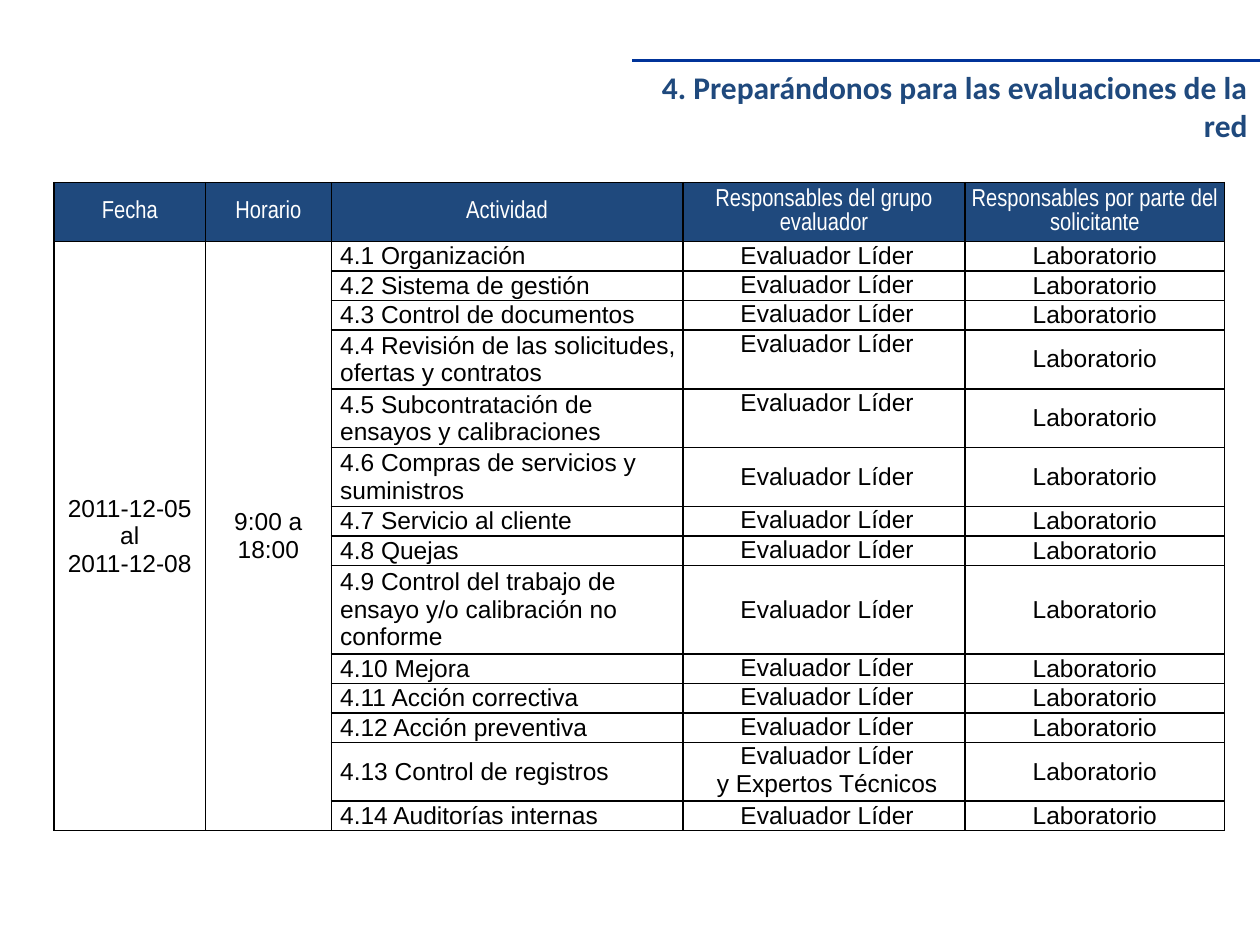
import pptx
import pptx.util
import pptx.dml.color
import pptx.enum.shapes
import pptx.enum.text
import pptx.oxml.ns
from lxml import etree

Inches = pptx.util.Inches
Pt = pptx.util.Pt
RGB = pptx.dml.color.RGBColor
Align = pptx.enum.text.PP_ALIGN
Anchor = pptx.enum.text.MSO_ANCHOR
qn = pptx.oxml.ns.qn

NAVY = RGB(0x1F, 0x49, 0x7D)
BLUE = RGB(0x00, 0x33, 0x99)
BLACK = RGB(0, 0, 0)
WHITE = RGB(0xFF, 0xFF, 0xFF)

HEADS = ["Fecha", "Horario", "Actividad", "Responsables del grupo evaluador",
         "Responsables por parte del solicitante"]
DATES = ["2011-12-05 al", "2011-12-08"]
HOURS = ["9:00 a 18:00"]
LEAD = "Evaluador Líder"
LAB = "Laboratorio"
# Activity, lines of text in the row, anchor of the evaluator cell
TASKS = [
    ("4.1 Organización", 1, Anchor.MIDDLE),
    ("4.2 Sistema de gestión", 1, Anchor.TOP),
    ("4.3 Control de documentos", 1, Anchor.TOP),
    ("4.4 Revisión de las solicitudes, ofertas y contratos", 2, Anchor.TOP),
    ("4.5 Subcontratación de ensayos y calibraciones", 2, Anchor.TOP),
    ("4.6 Compras de servicios y suministros", 2, Anchor.MIDDLE),
    ("4.7 Servicio al cliente", 1, Anchor.TOP),
    ("4.8 Quejas", 1, Anchor.TOP),
    ("4.9 Control del trabajo de ensayo y/o calibración no conforme", 3, Anchor.MIDDLE),
    ("4.10 Mejora", 1, Anchor.TOP),
    ("4.11 Acción correctiva", 1, Anchor.TOP),
    ("4.12 Acción preventiva", 1, Anchor.TOP),
    ("4.13 Control de registros", 2, Anchor.TOP),
    ("4.14 Auditorías internas", 1, Anchor.MIDDLE),
]
EXTRA = {"4.13 Control de registros": ["y Expertos Técnicos"]}
WIDTHS = [1.2, 1, 2.79, 2.24, 2.06]
HEIGHT = 5.13


class Deck:
    def __init__(self):
        self.prs = pptx.Presentation()
        self.prs.slide_width = Inches(10)
        self.prs.slide_height = Inches(7.5)
        self.slide = self.prs.slides.add_slide(self.prs.slide_layouts[6])
        self.size = Pt(14)

    def text(self, para, words, font, size, color, bold=False, align=Align.LEFT,
             left=0, first=0):
        para.alignment = align
        props = para._p.get_or_add_pPr()
        props.set("marL", str(Inches(left)))
        props.set("indent", str(Inches(first)))
        run = para.add_run()
        run.text = words
        run.font.name = font
        run.font.size = size
        run.font.bold = bold
        run.font.color.rgb = color

    def rule(self, start, end, y, color, width):
        line = self.slide.shapes.add_connector(
            pptx.enum.shapes.MSO_CONNECTOR.STRAIGHT,
            Inches(start), Inches(y), Inches(end), Inches(y))
        line.line.color.rgb = color
        line.line.width = Pt(width)
        etree.SubElement(line._element.spPr, qn("a:effectLst"))

    def title(self, words, x, y, w, h):
        frame = self.slide.shapes.add_textbox(
            Inches(x), Inches(y), Inches(w), Inches(h)).text_frame
        frame.word_wrap = True
        frame.auto_size = pptx.enum.text.MSO_AUTO_SIZE.SHAPE_TO_FIT_TEXT
        self.text(frame.paragraphs[0], words, "Calibri", Pt(18), NAVY, True,
                  Align.RIGHT, 0.5, -0.5)

    def table(self, x, y, widths, heights):
        grid = self.slide.shapes.add_table(
            len(heights), len(widths), Inches(x), Inches(y),
            Inches(sum(widths)), Inches(sum(heights))).table
        for col, width in zip(grid.columns, widths):
            col.width = Inches(width)
        for row, height in zip(grid.rows, heights):
            row.height = Inches(height)
        for cell in grid.iter_cells():
            self.border(cell)
            cell.fill.background()
        return grid

    def border(self, cell):
        props = cell._tc.get_or_add_tcPr()
        for side in ("lnL", "lnR", "lnT", "lnB"):
            edge = etree.SubElement(props, qn("a:" + side), w=str(Pt(1)))
            fill = etree.SubElement(edge, qn("a:solidFill"))
            etree.SubElement(fill, qn("a:srgbClr"), val=str(BLACK))

    def cell(self, cell, lines, font="Arial", color=BLACK, align=Align.CENTER,
             left=0, anchor=Anchor.MIDDLE):
        cell.margin_left = cell.margin_right = Inches(0.02)
        cell.margin_top = cell.margin_bottom = 0
        cell.vertical_anchor = anchor
        frame = cell.text_frame
        for i, words in enumerate(lines):
            para = frame.add_paragraph() if i else frame.paragraphs[0]
            self.text(para, words, font, self.size, color, align=align, left=left)


def main():
    deck = Deck()

    # Heading
    deck.rule(10, 5.02, 0.48, BLUE, 1.5)
    deck.title("4. Preparándonos para las evaluaciones de la red", 5, 0.49, 5, 0.71)

    # Schedule grid: row heights follow the number of text lines
    counts = [2] + [count for _, count, _ in TASKS]
    grid = deck.table(0.43, 1.45, WIDTHS,
                      [HEIGHT * count / sum(counts) for count in counts])

    # Header row
    for col, head in enumerate(HEADS):
        cell = grid.cell(0, col)
        cell.fill.solid()
        cell.fill.fore_color.rgb = NAVY
        deck.cell(cell, [head], "Arial Narrow", WHITE)

    # Date and time, each spanning all activities
    for col, lines in enumerate([DATES, HOURS]):
        cell = grid.cell(1, col)
        cell.merge(grid.cell(len(TASKS), col))
        deck.cell(cell, lines)

    # Activities
    for row, (task, _, anchor) in enumerate(TASKS, 1):
        deck.cell(grid.cell(row, 2), [task], align=Align.LEFT, left=0.05)
        deck.cell(grid.cell(row, 3), [LEAD] + EXTRA.get(task, []),
                  left=0.05, anchor=anchor)
        deck.cell(grid.cell(row, 4), [LAB])

    deck.prs.save("out.pptx")


if __name__ == "__main__":
    main()
